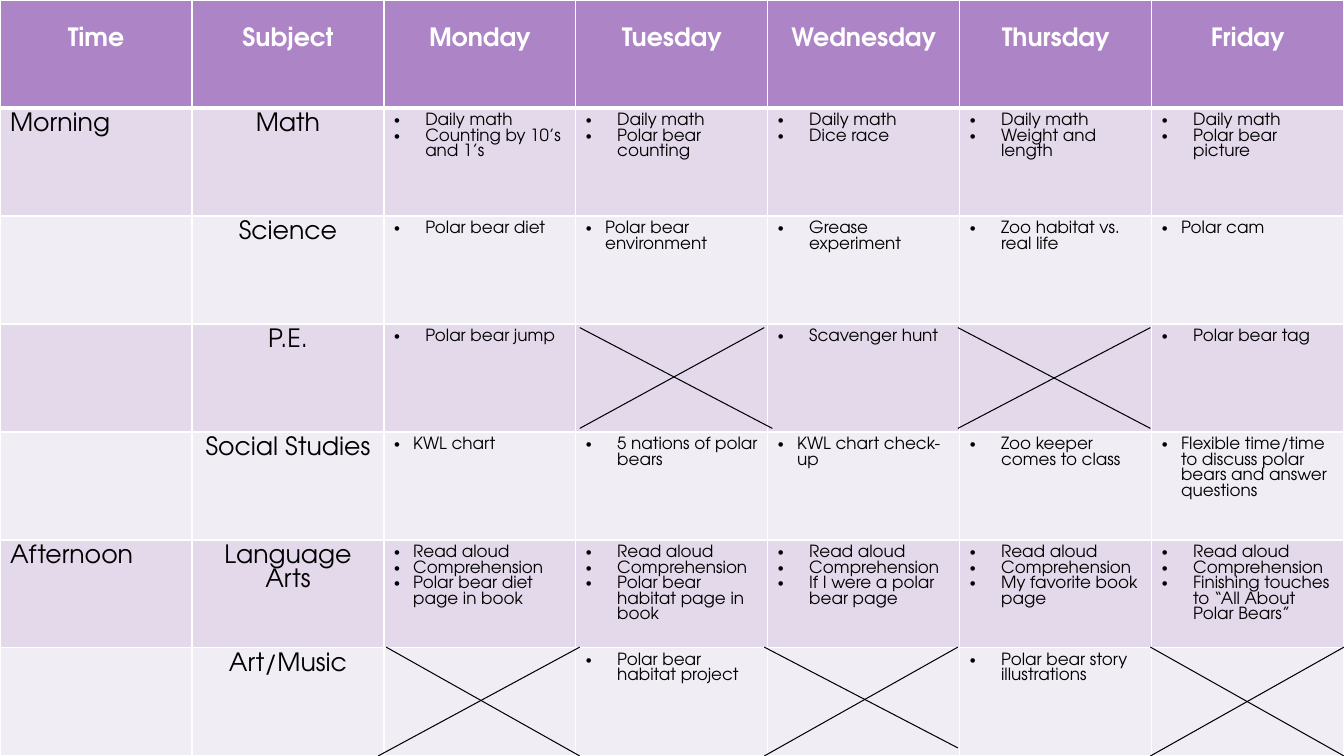
from dataclasses import dataclass

from lxml.etree import SubElement
from pptx import Presentation
from pptx.dml.color import RGBColor
from pptx.enum.shapes import MSO_CONNECTOR as Connector
from pptx.enum.text import PP_ALIGN as Align
from pptx.oxml.ns import qn
from pptx.util import Inches, Pt


@dataclass(frozen=True)
class Theme:
    """Colours, type sizes and line widths of the slide."""
    font: str = "TeX Gyre Adventor"
    header: str = "AD84C6"
    bands: tuple = ("E3D9EA", "F1EDF5")
    white: str = "FFFFFF"
    black: str = "000000"
    label_size: float = 18
    item_size: float = 12
    border: float = 1
    header_border: float = 3
    cross_line: float = 0.75


THEME = Theme()
WIDTH, HEIGHT = 13.33, 7.5
WIDE_INDENT, NARROW_INDENT = 0.31, 0.19
HEADER_TOP = 0.28

HEADERS = ("Time", "Subject", "Monday", "Tuesday", "Wednesday", "Thursday", "Friday")
LESSONS = (
    ("Morning", "Math",
     ("Daily math", "Counting by 10’s and 1’s"),
     ("Daily math", "Polar bear counting"),
     ("Daily math", "Dice race"),
     ("Daily math", "Weight and length"),
     ("Daily math", "Polar bear picture")),
    ("", "Science",
     ("Polar bear diet",), ("Polar bear environment",), ("Grease experiment",),
     ("Zoo habitat vs. real life",), ("Polar cam",)),
    ("", "P.E.",
     ("Polar bear jump",), (), ("Scavenger hunt",), (), ("Polar bear tag",)),
    ("", "Social Studies",
     ("KWL chart",), ("5 nations of polar bears",), ("KWL chart check-up",),
     ("Zoo keeper comes to class",),
     ("Flexible time/time to discuss polar bears and answer questions",)),
    ("Afternoon", "Language Arts",
     ("Read aloud", "Comprehension", "Polar bear diet page in book"),
     ("Read aloud", "Comprehension", "Polar bear habitat page in book"),
     ("Read aloud", "Comprehension", "If I were a polar bear page"),
     ("Read aloud", "Comprehension", "My favorite book page"),
     ("Read aloud", "Comprehension", "Finishing touches to “All About Polar Bears”")),
    ("", "Art/Music",
     (), ("Polar bear habitat project",), (), ("Polar bear story illustrations",), ()),
)
NARROW_CELLS = {(2, 3), (2, 6), (4, 2), (4, 4), (4, 6), (5, 2)}
CROSS_LINES = (
    (5.75, 3.25, 7.66, 4.25), (7.58, 3.25, 5.75, 4.25),
    (9.5, 3.25, 11.41, 4.25), (11.41, 3.25, 9.5, 4.25),
    (3.83, 6.42, 5.75, 7.5), (5.75, 6.42, 3.75, 7.5),
    (7.58, 6.42, 9.5, 7.42), (9.5, 6.42, 7.58, 7.5),
    (11.41, 6.42, 13.33, 7.5), (13.33, 6.42, 11.41, 7.5),
)


def style_cell(cell, color, top, bottom):
    """Give a cell white borders and a solid fill."""
    properties = cell._tc.get_or_add_tcPr()
    widths = {"L": THEME.border, "R": THEME.border, "T": top, "B": bottom}
    for side, width in widths.items():
        line = SubElement(properties, qn(f"a:ln{side}"), w=str(Pt(width)))
        fill = SubElement(line, qn("a:solidFill"))
        SubElement(fill, qn("a:srgbClr"), val=THEME.white)
    cell.fill.solid()
    cell.fill.fore_color.rgb = RGBColor.from_string(color)


def add_bullet(para, indent):
    """Turn a paragraph into a bullet with a hanging indent."""
    properties = para._p.get_or_add_pPr()
    properties.set("marL", str(Inches(indent)))
    properties.set("indent", str(-Inches(indent)))
    SubElement(properties, qn("a:buFont"), typeface="Arial")
    SubElement(properties, qn("a:buChar"), char="•")


def write_cell(cell, lines, size, color, bold=False, align=Align.LEFT, indent=None):
    """Write one paragraph per line, bulleted when an indent is given."""
    frame = cell.text_frame
    for number, text in enumerate(lines):
        para = frame.add_paragraph() if number else frame.paragraphs[0]
        para.alignment = align
        if indent:
            add_bullet(para, indent)
        span = para.add_run()
        span.text = text
        formats = {"name": THEME.font, "size": Pt(size), "bold": bold}
        for name, value in formats.items():
            setattr(span.font, name, value)
        span.font.color.rgb = RGBColor.from_string(color)


def add_schedule(page, left, top, width, height):
    """Add the weekly schedule table to the given box."""
    box = [Inches(value) for value in (left, top, width, height)]
    row_count, column_count = len(LESSONS) + 1, len(HEADERS)
    table = page.shapes.add_table(row_count, column_count, *box).table
    for column in table.columns:
        column.width = Inches(width / column_count)
    for row in table.rows:
        row.height = Inches(height / row_count)

    for column, title in enumerate(HEADERS):
        cell = table.cell(0, column)
        cell.margin_top = Inches(HEADER_TOP)
        style_cell(cell, THEME.header, THEME.border, THEME.header_border)
        write_cell(cell, (title,), THEME.label_size, THEME.white, True, Align.CENTER)

    for row, (time, subject, *days) in enumerate(LESSONS, 1):
        edge = THEME.header_border if row == 1 else THEME.border
        for column in range(column_count):
            style_cell(table.cell(row, column), THEME.bands[(row - 1) % 2], edge, THEME.border)
        if time:
            write_cell(table.cell(row, 0), (time,), THEME.label_size, THEME.black)
        write_cell(table.cell(row, 1), (subject,), THEME.label_size, THEME.black,
                   align=Align.CENTER)
        for column, items in enumerate(days, 2):
            indent = NARROW_INDENT if (row, column) in NARROW_CELLS else WIDE_INDENT
            write_cell(table.cell(row, column), items, THEME.item_size, THEME.black,
                       indent=indent)


def add_crosses(page, left, top):
    """Cross out the free periods, measured from the corner of the schedule."""
    for x1, y1, x2, y2 in CROSS_LINES:
        ends = [Inches(value) for value in (left + x1, top + y1, left + x2, top + y2)]
        stroke = page.shapes.add_connector(Connector.STRAIGHT, *ends)
        stroke.line.width = Pt(THEME.cross_line)
        stroke.line.color.rgb = RGBColor.from_string(THEME.black)
        SubElement(stroke._element.spPr, qn("a:effectLst"))


def main():
    """Build the schedule slide and save the deck."""
    deck = Presentation()
    deck.slide_width, deck.slide_height = Inches(WIDTH), Inches(HEIGHT)
    page = deck.slides.add_slide(deck.slide_layouts[6])
    add_schedule(page, 0, 0, WIDTH, HEIGHT)
    add_crosses(page, 0, 0)
    deck.save("out.pptx")


if __name__ == "__main__":
    main()
